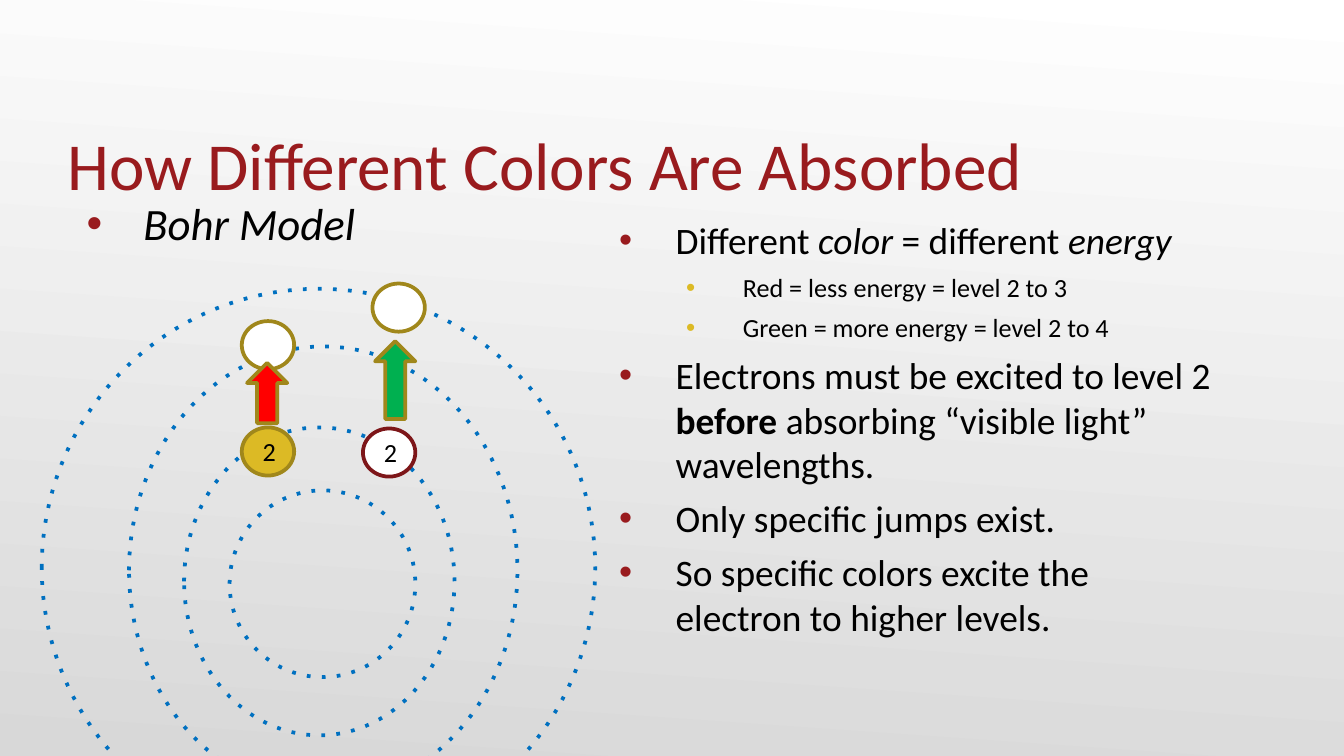
from lxml import etree
from pptx import Presentation
from pptx import util as u
from pptx.dml.color import RGBColor
from pptx.enum import dml, shapes, text
from pptx.oxml.ns import qn

FONT = "Calibri"
BLACK, WHITE = "000000", "FFFFFF"
RED, GOLD, DARK_GOLD = "991B1E", "DCBA25", "A0871B"
LEVELS = [{"indent": 1.27, "bullet": RED}, {"indent": 2.54, "bullet": GOLD}]


def color(value):
    return RGBColor.from_string(value)


def box(values):
    return [u.Cm(value) for value in values]


def apply(target, values):
    for name, value in values.items():
        setattr(target, name, value)


def add_run(paragraph, words, size, fill=BLACK, **style):
    run = paragraph.add_run()
    run.text = words
    apply(run.font, {"name": FONT, "size": u.Pt(size), **style})
    run.font.color.rgb = color(fill)


def add_bullet(paragraph, level):
    properties = paragraph._p.get_or_add_pPr()
    properties.set("marL", str(u.Cm(LEVELS[level]["indent"])))
    properties.set("indent", str(u.Cm(-1.07)))
    bullet_color = etree.SubElement(properties, qn("a:buClr"))
    etree.SubElement(bullet_color, qn("a:srgbClr"), val=LEVELS[level]["bullet"])
    etree.SubElement(properties, qn("a:buFont"), typeface="Arial")
    etree.SubElement(properties, qn("a:buChar"), char="•")


def add_title(slide, words):
    frame = slide.shapes.add_textbox(*box((1.27, 1.47, 22.86, 2.39))).text_frame
    apply(frame, {"word_wrap": True, "vertical_anchor": text.MSO_ANCHOR.BOTTOM,
                  "margin_left": 0, "margin_right": 0, "margin_bottom": 0})
    add_run(frame.paragraphs[0], words, 36, RED)


def add_list(slide, position, items):
    """Each item is (level, size, runs); each run is (words, style)."""
    frame = slide.shapes.add_textbox(*box(position)).text_frame
    frame.word_wrap = True
    for index, (level, size, runs) in enumerate(items):
        paragraph = frame.add_paragraph() if index else frame.paragraphs[0]
        add_bullet(paragraph, level)
        paragraph.level = level
        if index:
            paragraph.space_before = u.Pt(4.8)
        for words, style in runs:
            add_run(paragraph, words, size, **style)


def add_figure(slide, kind, position, line, fill=None):
    shape = slide.shapes.add_shape(kind, *box(position))
    shape.shadow.inherit = False
    if fill:
        shape.fill.solid()
        shape.fill.fore_color.rgb = color(fill)
    else:
        shape.fill.background()
    shape.line.color.rgb = color(line)
    shape.line.width = u.Pt(2)
    return shape


def add_orbit(slide, position):
    orbit = add_figure(slide, shapes.MSO_SHAPE.OVAL, position, "0070C0")
    orbit.line.dash_style = dml.MSO_LINE.ROUND_DOT
    for dash in orbit.element.iter(qn("a:prstDash")):
        dash.set("val", "dot")


def add_electron(slide, left, top, fill=WHITE, line=DARK_GOLD, label=None):
    electron = add_figure(slide, shapes.MSO_SHAPE.OVAL, (left, top, 0.99, 0.91), line, fill)
    if label:
        frame = electron.text_frame
        apply(frame, {"word_wrap": True, "vertical_anchor": text.MSO_ANCHOR.MIDDLE})
        frame.paragraphs[0].alignment = text.PP_ALIGN.CENTER
        add_run(frame.paragraphs[0], label, 14)


def add_background(slide):
    fill = slide.background.fill
    fill.gradient()
    fill.gradient_angle = 266
    for stop, position, value in zip(fill.gradient_stops, (0, 1), (WHITE, "D8D8D8")):
        stop.position = position
        stop.color.rgb = color(value)


def main():
    presentation = Presentation()
    apply(presentation, {"slide_width": u.Cm(25.4), "slide_height": u.Cm(14.29)})
    slide = presentation.slides.add_slide(presentation.slide_layouts[6])
    add_background(slide)

    # Title and bullet lists
    plain, italic, bold = {}, {"italic": True}, {"bold": True}
    add_title(slide, "How Different Colors Are Absorbed")
    add_list(slide, (1.19, 3.58, 9.96, 9.25), [(0, 24, [("Bohr Model", italic)])])
    add_list(slide, (11.25, 3.99, 12.12, 9.25), [
        (0, 20, [("Different ", plain), ("color", italic),
                 (" = different ", plain), ("energy", italic)]),
        (1, 14, [("Red = less energy = level 2 to 3", plain)]),
        (1, 14, [("Green = more energy = level 2 to 4", plain)]),
        (0, 20, [("Electrons must be excited to level 2 ", plain), ("before", bold),
                 (" absorbing “visible light” wavelengths.", plain)]),
        (0, 20, [("Only specific jumps exist.", plain)]),
        (0, 20, [("So specific colors excite the electron to higher levels.", plain)]),
    ])

    # Energy levels of the atom
    for position in [(3.48, 8.08, 5.11, 5.82), (0.79, 5.46, 10.46, 10.54),
                     (2.44, 6.55, 7.34, 8.46), (4.34, 9.27, 3.51, 3.53)]:
        add_orbit(slide, position)

    # Electrons before and after the jump
    add_electron(slide, 4.57, 8.08, fill=GOLD, label="2")
    add_electron(slide, 6.86, 8.1, line="7D1619", label="2")
    add_electron(slide, 4.57, 6.07)
    add_electron(slide, 7.04, 5.36)

    # Jumps caused by red and green light
    for left, top, height, fill in [(4.67, 6.86, 1.14, "FF0000"), (7.09, 6.45, 1.47, "00B050")]:
        add_figure(slide, shapes.MSO_SHAPE.UP_ARROW, (left, top, 0.76, height), DARK_GOLD, fill)

    presentation.save("out.pptx")


if __name__ == "__main__":
    main()
